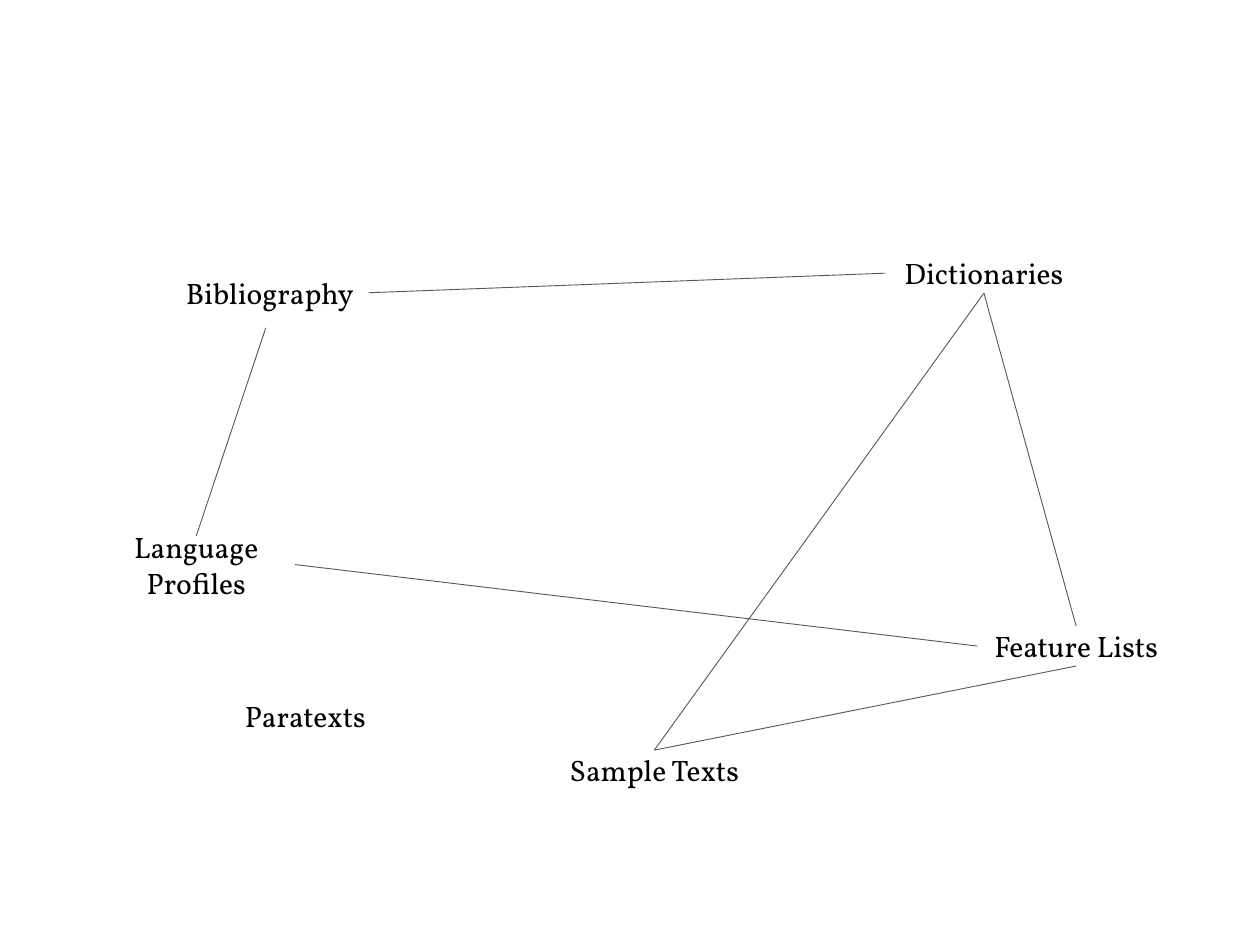
from lxml.etree import SubElement
from pptx import Presentation
from pptx.dml.color import RGBColor
from pptx.enum.shapes import MSO_CONNECTOR
from pptx.enum.text import MSO_ANCHOR, PP_ALIGN
from pptx.oxml.ns import qn
from pptx.util import Inches, Pt

SLIDE_WIDTH, SLIDE_HEIGHT = Inches(14.22), Inches(10.67)
FONT, TEXT_COLOR, LINK_COLOR = "Vollkorn", "000000", "53585F"

# Resources: left, top and height in percent of the slide
RESOURCE_WIDTH = 15.68
ONE_LINE, TWO_LINES = 4.22, 6.09
RESOURCES = {
    "Feature Lists": (77.57, 66.26, ONE_LINE),
    "Paratexts": (16.39, 73.66, ONE_LINE),
    "Bibliography": (13.57, 28.87, ONE_LINE),
    "Language Profiles": (7.74, 56.70, TWO_LINES),
    "Dictionaries": (70.25, 26.80, ONE_LINE),
    "Sample Texts": (44.09, 79.38, ONE_LINE),
}

# Link ends: shares of the resource's width and height
LEFT, RIGHT, TOP, BOTTOM = (0, 0.5), (1, 0.5), (0.5, 0), (0.5, 1)
BELOW = (0.48, 1.38)
LINKS = [
    ("Language Profiles", TOP, "Bibliography", BELOW),
    ("Bibliography", RIGHT, "Dictionaries", LEFT),
    ("Language Profiles", RIGHT, "Feature Lists", LEFT),
    ("Sample Texts", TOP, "Dictionaries", BOTTOM),
    ("Sample Texts", TOP, "Feature Lists", BOTTOM),
    ("Dictionaries", BOTTOM, "Feature Lists", TOP),
]


def color(hex_value):
    return RGBColor.from_string(hex_value)


def across(percent):
    return round(SLIDE_WIDTH * percent / 100)


def down(percent):
    return round(SLIDE_HEIGHT * percent / 100)


def link_end(resource, shares):
    left, top, height = RESOURCES[resource]
    return (across(left + shares[0] * RESOURCE_WIDTH),
            down(top + shares[1] * height))


def add_resource(slide, label, left, top, height):
    box = slide.shapes.add_textbox(
        across(left), down(top), across(RESOURCE_WIDTH), down(height))
    frame = box.text_frame
    frame.word_wrap = True
    frame.vertical_anchor = MSO_ANCHOR.MIDDLE
    frame.margin_left = frame.margin_right = Inches(0.1)
    frame.margin_top = frame.margin_bottom = Inches(0.1)
    paragraph = frame.paragraphs[0]
    paragraph.text = label
    paragraph.alignment = PP_ALIGN.CENTER
    paragraph.font.name = FONT
    paragraph.font.size = Pt(24)
    paragraph.font.color.rgb = color(TEXT_COLOR)


def add_link(slide, start, start_shares, end, end_shares):
    link = slide.shapes.add_connector(
        MSO_CONNECTOR.STRAIGHT,
        *link_end(start, start_shares), *link_end(end, end_shares))
    link.line.color.rgb = color(LINK_COLOR)
    link.line.width = Pt(0.75)
    SubElement(link._element.spPr, qn("a:effectLst"))


def main():
    presentation = Presentation()
    presentation.slide_width = SLIDE_WIDTH
    presentation.slide_height = SLIDE_HEIGHT
    blank_layout = presentation.slide_layouts[6]
    slide = presentation.slides.add_slide(blank_layout)

    # Resource labels
    for label, place in RESOURCES.items():
        add_resource(slide, label, *place)

    # Links between resources
    for link in LINKS:
        add_link(slide, *link)

    presentation.save("out.pptx")


if __name__ == "__main__":
    main()
